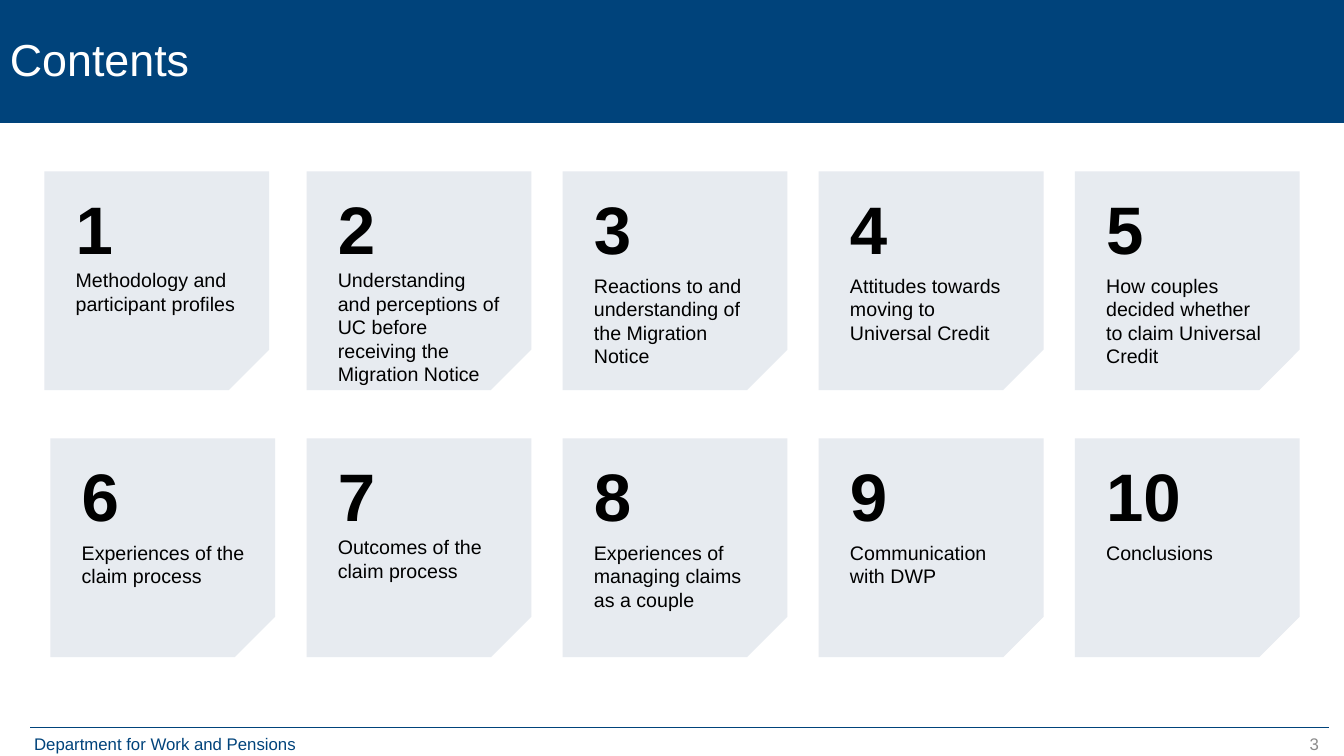
from dataclasses import dataclass

from lxml.etree import SubElement
from pptx import Presentation
from pptx.dml.color import RGBColor
from pptx.enum.shapes import MSO_CONNECTOR as Connector, MSO_SHAPE as Preset
from pptx.enum.text import MSO_ANCHOR as Anchor, PP_ALIGN as Align
from pptx.oxml.ns import qn
from pptx.util import Inches, Pt


@dataclass(frozen=True)
class Theme:
    font: str = "Arial"
    navy: str = "00437B"
    card: str = "E7EBF0"
    ink: str = "000000"
    white: str = "FFFFFF"
    grey: str = "8C8C8C"
    title_size: int = 32
    number_size: int = 48
    topic_size: int = 14
    footer_size: int = 12


def apply_format(target, values):
    for name, value in values.items():
        setattr(target, name, value)


class SlideBuilder:
    def __init__(self, slide, theme):
        self.slide = slide
        self.theme = theme

    def fill_paragraph(self, paragraph, text, size, color, bold=False, **layout):
        apply_format(paragraph, {"alignment": Align.LEFT, **layout})
        run = paragraph.add_run()
        run.text = text
        apply_format(run.font, {"name": self.theme.font, "size": Pt(size), "bold": bold})
        run.font.color.rgb = RGBColor.from_string(color)

    def block(self, preset, box, fill):
        shape = self.slide.shapes.add_shape(preset, *map(Inches, box))
        shape.shadow.inherit = False
        shape.fill.solid()
        shape.fill.fore_color.rgb = RGBColor.from_string(fill)
        shape.line.fill.background()
        return shape

    def title(self, text, box):
        banner = self.block(Preset.RECTANGLE, box, self.theme.navy)
        apply_format(banner.text_frame, {"word_wrap": True, "vertical_anchor": Anchor.MIDDLE})
        self.fill_paragraph(banner.text_frame.paragraphs[0], text, self.theme.title_size,
                            self.theme.white, line_spacing=0.9)

    def card(self, number, topic, box, gap):
        shape = self.block(Preset.SNIP_1_RECTANGLE, box, self.theme.card)
        shape.rotation = 90
        shape.adjustments[0] = 0.185
        frame = shape.text_frame
        apply_format(frame, {
            "word_wrap": True,
            "vertical_anchor": Anchor.TOP,
            "margin_left": Inches(0.16),
            "margin_top": Inches(0.08),
            "margin_right": Inches(0.08),
            "margin_bottom": Inches(0.31),
        })
        shape.element.txBody.bodyPr.set("vert", "vert270")
        self.fill_paragraph(frame.paragraphs[0], str(number), self.theme.number_size,
                            self.theme.ink, bold=True)
        self.fill_paragraph(frame.add_paragraph(), topic, self.theme.topic_size,
                            self.theme.ink, space_before=Pt(gap), space_after=Pt(gap))

    def footer_text(self, text, box, color, alignment):
        shape = self.slide.shapes.add_textbox(*map(Inches, box))
        shape.text_frame.word_wrap = True
        self.fill_paragraph(shape.text_frame.paragraphs[0], text, self.theme.footer_size,
                            color, alignment=alignment)

    def rule(self, left, right, top):
        line = self.slide.shapes.add_connector(
            Connector.STRAIGHT, Inches(left), Inches(top), Inches(right), Inches(top))
        line.line.color.rgb = RGBColor.from_string(self.theme.navy)
        line.line.width = Pt(0.5)
        SubElement(line.element.spPr, qn("a:effectLst"))


TOPICS = [
    "Methodology and participant profiles",
    "Understanding and perceptions of UC before receiving the Migration Notice",
    "Reactions to and understanding of the Migration Notice",
    "Attitudes towards moving to Universal Credit",
    "How couples decided whether to claim Universal Credit",
    "Experiences of the claim process",
    "Outcomes of the claim process",
    "Experiences of managing claims as a couple",
    "Communication with DWP",
    "Conclusions",
]
COLUMNS = 5
TIGHT_CARDS = {1, 2, 7}
FIRST_CARD_LEFT = 0.47


def main():
    presentation = Presentation()
    apply_format(presentation, {"slide_width": Inches(13.33), "slide_height": Inches(7.5)})
    theme = Theme()
    builder = SlideBuilder(presentation.slides.add_slide(presentation.slide_layouts[6]), theme)

    builder.footer_text("Department for Work and Pensions", (0.24, 7.23, 3.23, 0.3),
                        theme.navy, Align.JUSTIFY)
    builder.rule(0.3, 13.18, 7.22)
    builder.footer_text("3", (10.18, 7.23, 3, 0.4), theme.grey, Align.RIGHT)
    builder.title("Contents", (0, 0, 13.33, 1.22))

    for number, topic in enumerate(TOPICS, start=1):
        row, column = divmod(number - 1, COLUMNS)
        left = FIRST_CARD_LEFT if number == 1 else 0.53 + 2.54 * column
        gap = 0 if number in TIGHT_CARDS else 4
        builder.card(number, topic, (left, 1.67 + 2.65 * row, 2.17, 2.23), gap)

    presentation.save("out.pptx")


if __name__ == "__main__":
    main()
